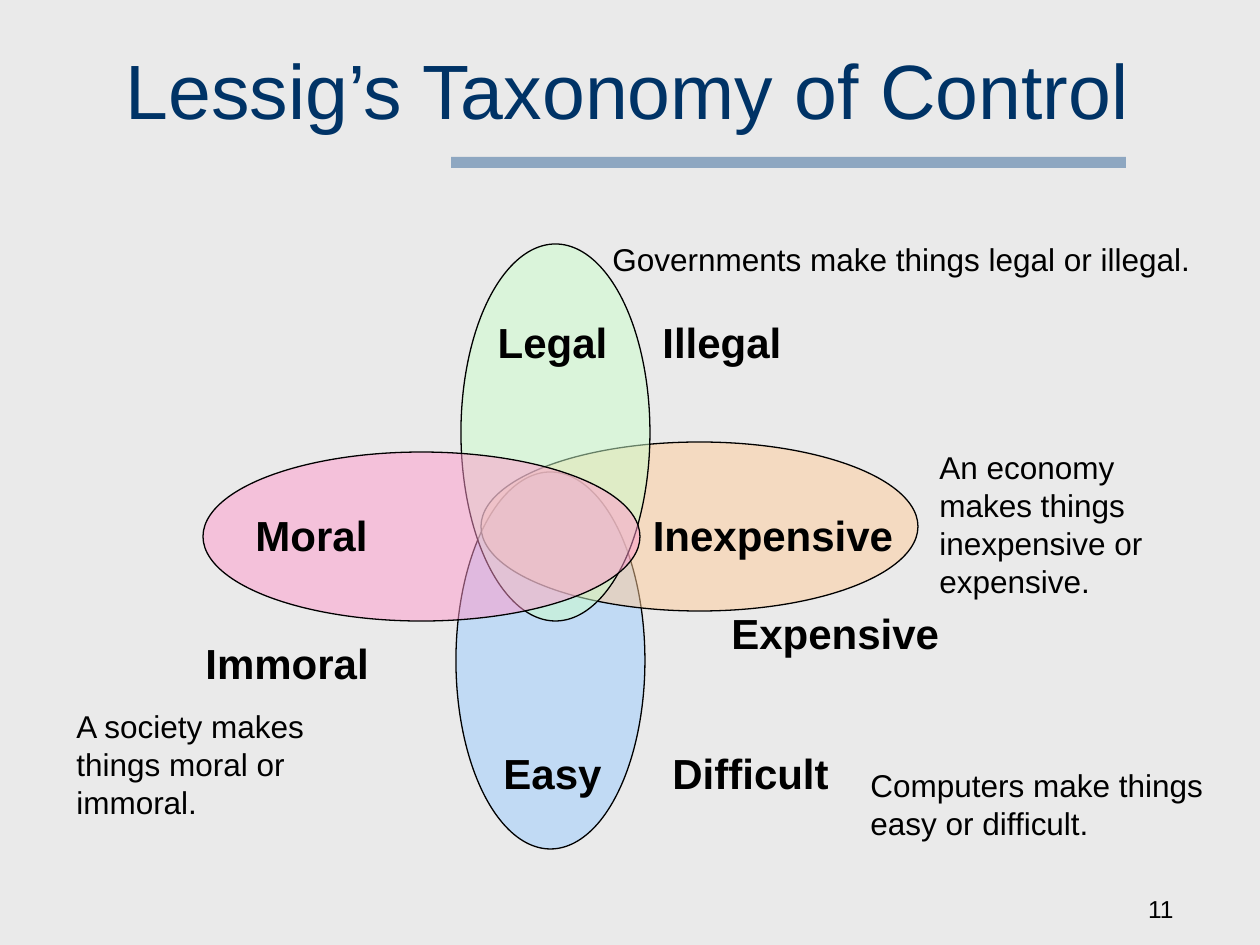
from lxml import etree
from pptx import Presentation
from pptx import util as u
from pptx.dml.color import RGBColor
from pptx.enum import shapes, text
from pptx.oxml.ns import qn

BACKGROUND = RGBColor(0xEA, 0xEA, 0xEA)
NAVY = RGBColor(0x00, 0x33, 0x66)
STEEL = RGBColor(0x33, 0x66, 0x99)
BLACK = RGBColor(0x00, 0x00, 0x00)
BLUE = RGBColor(0x99, 0xCC, 0xFF)
ORANGE = RGBColor(0xFF, 0xCC, 0x99)
GREEN = RGBColor(0xCC, 0xFF, 0xCC)
PINK = RGBColor(0xFF, 0x99, 0xCC)

LEFT, CENTER, RIGHT = text.PP_ALIGN.LEFT, text.PP_ALIGN.CENTER, text.PP_ALIGN.RIGHT
TOP, MIDDLE, BOTTOM = text.MSO_ANCHOR.TOP, text.MSO_ANCHOR.MIDDLE, text.MSO_ANCHOR.BOTTOM
TALL, WIDE = (189, 377), (437, 169)


def px(*lengths):
    return [u.Emu(round(n * 914400 / 126)) for n in lengths]


class Deck:
    font = "Arial"

    def __init__(self, width, height):
        self.prs = Presentation()
        self.prs.slide_width, self.prs.slide_height = px(width, height)
        self.slide = self.prs.slides.add_slide(self.prs.slide_layouts[5])
        fill = self.slide.background.fill
        fill.solid()
        fill.fore_color.rgb = BACKGROUND
        self.shapes = self.slide.shapes

    def group(self):
        self.shapes = self.slide.shapes.add_group_shape().shapes

    def ungroup(self):
        self.shapes = self.slide.shapes

    def set_text(self, sp, words, size, color=BLACK, bold=False, align=LEFT, anchor=TOP, wrap=True):
        tf = sp.text_frame
        tf.auto_size = text.MSO_AUTO_SIZE.NONE
        tf.word_wrap = wrap
        tf.vertical_anchor = anchor
        p = tf.paragraphs[0]
        p.alignment = align
        r = p.add_run()
        r.text = words
        r.font.name, r.font.size, r.font.bold = self.font, u.Pt(size), bold
        r.font.color.rgb = color

    def title(self, words, *box):
        sp = self.slide.shapes.title
        sp.left, sp.top, sp.width, sp.height = px(*box)
        self.set_text(sp, words, 44, NAVY, anchor=MIDDLE)

    def shape(self, kind, color, *box):
        sp = self.shapes.add_shape(kind, *px(*box))
        sp.shadow.inherit = False
        sp.fill.solid()
        sp.fill.fore_color.rgb = color
        clr = sp.element.spPr.find(qn("a:solidFill"))[0]
        etree.SubElement(clr, qn("a:alpha")).set("val", "50000")
        return sp

    def bar(self, color, *box):
        self.shape(shapes.MSO_SHAPE.RECTANGLE, color, *box).line.fill.background()

    def ellipse(self, color, left, top, size):
        sp = self.shape(shapes.MSO_SHAPE.OVAL, color, left, top, *size)
        sp.line.color.rgb = BLACK
        sp.line.width = u.Pt(0.75)

    def label(self, words, left, top, width, align=LEFT):
        sp = self.shapes.add_textbox(*px(left, top, width, 63))
        self.set_text(sp, words, 24, bold=True, align=align, wrap=False)

    def note(self, words, *box):
        self.set_text(self.shapes.add_textbox(*px(*box)), words, 18)

    def number(self, words, *box):
        sp = self.shapes.add_textbox(*px(*box))
        self.set_text(sp, words, 14, align=RIGHT, anchor=BOTTOM)


def main():
    deck = Deck(1260, 945)
    deck.bar(STEEL, 451, 157, 675, 11)
    deck.title("Lessig’s Taxonomy of Control", 113, 31, 1077, 116)

    deck.group()
    deck.ellipse(BLUE, 456, 472, TALL)
    deck.label("Easy", 491, 741, 123, CENTER)
    deck.label("Difficult", 660, 741, 181)

    deck.group()
    deck.ellipse(ORANGE, 481, 442, WIDE)
    deck.label("Inexpensive", 640, 503, 266, CENTER)
    deck.label("Expensive", 719, 601, 233)

    deck.ungroup()
    deck.note("Computers make things easy or difficult.", 858, 760, 358, 88)

    deck.group()
    deck.ellipse(GREEN, 461, 244, TALL)
    deck.label("Legal", 485, 310, 135, CENTER)
    deck.label("Illegal", 650, 310, 144)
    deck.note("Governments make things legal or illegal.", 600, 234, 625, 50)

    deck.ungroup()
    deck.note("An economy makes things inexpensive or expensive.", 927, 442, 287, 165)

    deck.group()
    deck.ellipse(PINK, 203, 452, WIDE)
    deck.label("Moral", 243, 503, 137, CENTER)
    deck.label("Immoral", 193, 631, 189)
    deck.note("A society makes things moral or immoral.", 64, 701, 287, 127)

    deck.ungroup()
    deck.number("11", 924, 867, 262, 63)
    deck.prs.save("out.pptx")


if __name__ == "__main__":
    main()
